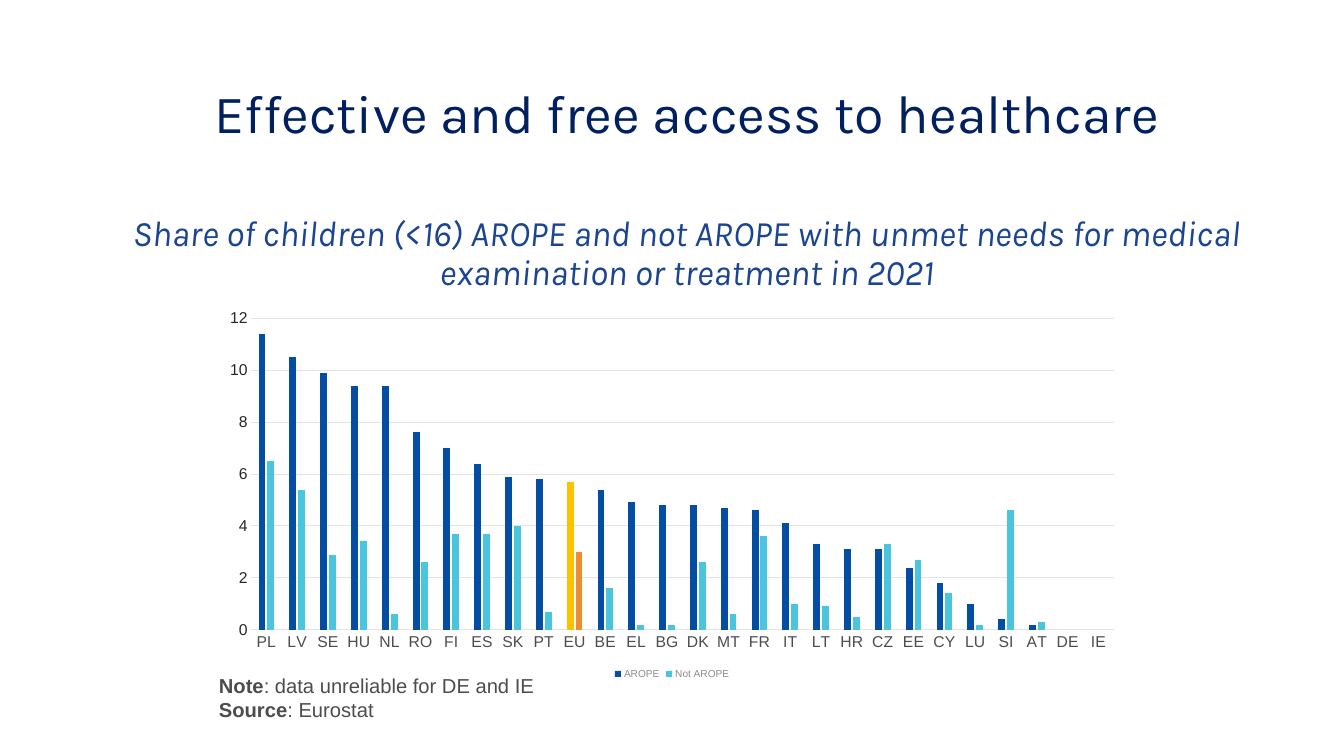
"""Build a slide on unmet medical needs of children by country."""
from lxml import etree
from pptx import Presentation
from pptx.chart.data import CategoryChartData
from pptx.dml.color import RGBColor
from pptx.enum.chart import XL_CHART_TYPE, XL_LEGEND_POSITION, XL_TICK_MARK
from pptx.enum.text import MSO_ANCHOR, PP_ALIGN
from pptx.oxml.ns import qn
from pptx.util import Pt

PX = 11331
SLIDE_SIZE = (1344, 756)
HEADING_BOX = (107, 83, 1160, 86)
CHART_BOX = (211, 302, 922, 381)
PLOT_BOX = (251, 318, 863, 312)
NOTES_BOX = (211, 669, 852, 57)

NAVY = RGBColor(0x00, 0x20, 0x60)
BLUE = RGBColor(0x1B, 0x45, 0x90)
DARK_GREY = RGBColor(0x4D, 0x4D, 0x4D)
BLACK = RGBColor(0x26, 0x26, 0x26)
LEGEND_GREY = RGBColor(0x8B, 0x8B, 0x8B)
GRID_GREY = RGBColor(0xE4, 0xE4, 0xE4)
AROPE_BLUE = RGBColor(0x03, 0x4E, 0xA2)
OTHER_CYAN = RGBColor(0x4B, 0xC5, 0xDE)
EU_YELLOW = RGBColor(0xFF, 0xC0, 0x00)
EU_ORANGE = RGBColor(0xED, 0x8D, 0x2F)

TITLE = "Effective and free access to healthcare"
SUBTITLE = ("Share of children (<16) AROPE and not AROPE with unmet needs for medical "
            "examination or treatment in 2021")
HEADINGS = [(TITLE, 48, NAVY, False, 0), (SUBTITLE, 32, BLUE, True, 63)]
NOTES = [("Note", ": data unreliable for DE and IE"), ("Source", ": Eurostat")]
COUNTRIES = ("PL LV SE HU NL RO FI ES SK PT EU BE EL BG "
             "DK MT FR IT LT HR CZ EE CY LU SI AT DE IE").split()
SERIES = [
    ("AROPE", AROPE_BLUE, EU_YELLOW,
     [11.4, 10.5, 9.9, 9.4, 9.4, 7.6, 7, 6.4, 5.9, 5.8, 5.7, 5.4, 4.9, 4.8,
      4.8, 4.7, 4.6, 4.1, 3.3, 3.1, 3.1, 2.4, 1.8, 1, 0.4, 0.2, None, None]),
    ("Not AROPE", OTHER_CYAN, EU_ORANGE,
     [6.5, 5.4, 2.9, 3.4, 0.6, 2.6, 3.7, 3.7, 4, 0.7, 3, 1.6, 0.2, 0.2,
      2.6, 0.6, 3.6, 1, 0.9, 0.5, 3.3, 2.7, 1.4, 0.2, 4.6, 0.3, None, None]),
]


def emu(box):
    return [length * PX for length in box]


def set_font(font, name, size, color):
    font.name, font.size = name, Pt(size)
    font.color.rgb = color


def add_text_frame(slide, box):
    frame = slide.shapes.add_textbox(*emu(box)).text_frame
    frame.word_wrap = True
    frame.vertical_anchor = MSO_ANCHOR.TOP
    return frame


def paragraphs(frame, count):
    for _ in range(count - 1):
        frame.add_paragraph()
    return frame.paragraphs


def add_headings(slide):
    frame = add_text_frame(slide, HEADING_BOX)
    for paragraph, heading in zip(paragraphs(frame, len(HEADINGS)), HEADINGS):
        paragraph.text, size, color, italic, gap = heading
        paragraph.alignment = PP_ALIGN.CENTER
        paragraph.line_spacing = 0.9
        if gap:
            paragraph.space_before = Pt(gap)
        set_font(paragraph.font, "Karla", size, color)
        paragraph.font.italic = italic


def add_notes(slide):
    frame = add_text_frame(slide, NOTES_BOX)
    for paragraph, (label, detail) in zip(paragraphs(frame, len(NOTES)), NOTES):
        label_run = paragraph.add_run()
        label_run.text = label
        label_run.font.bold = True
        paragraph.add_run().text = detail
        set_font(paragraph.font, "Arial", 18, DARK_GREY)


def place_plot(chart):
    plot_area = chart._chartSpace.chart.plotArea
    for old_layout in plot_area.findall(qn("c:layout")):
        plot_area.remove(old_layout)
    layout = etree.Element(qn("c:layout"))
    plot_area.insert(0, layout)
    manual = etree.SubElement(layout, qn("c:manualLayout"))
    left, top, width, height = CHART_BOX
    plot_left, plot_top, plot_width, plot_height = PLOT_BOX
    settings = [("layoutTarget", "inner"), ("xMode", "edge"), ("yMode", "edge"),
                ("x", (plot_left - left) / width), ("y", (plot_top - top) / height),
                ("w", plot_width / width), ("h", plot_height / height)]
    for tag, value in settings:
        etree.SubElement(manual, qn(f"c:{tag}")).set("val", str(value))


def style_axes(chart):
    countries, shares = chart.category_axis, chart.value_axis
    for axis, color in ((countries, DARK_GREY), (shares, BLACK)):
        axis.major_tick_mark = axis.minor_tick_mark = XL_TICK_MARK.NONE
        set_font(axis.tick_labels.font, "Arial", 14, color)
    shares.minimum_scale, shares.maximum_scale, shares.major_unit = 0, 12, 2
    shares.tick_labels.number_format = "0"
    shares.tick_labels.number_format_is_linked = False
    shares.has_major_gridlines = True
    shares.format.line.fill.background()
    for line in (countries.format.line, shares.major_gridlines.format.line):
        line.color.rgb = GRID_GREY
        line.width = Pt(0.75)


def add_needs_chart(slide):
    needs = CategoryChartData()
    needs.categories = COUNTRIES
    for name, _, _, shares in SERIES:
        needs.add_series(name, shares)
    chart = slide.shapes.add_chart(
        XL_CHART_TYPE.COLUMN_CLUSTERED, *emu(CHART_BOX), needs).chart
    set_font(chart.font, "Arial", 10, DARK_GREY)
    chart.has_title = False
    chart.has_legend = True
    chart.legend.position = XL_LEGEND_POSITION.BOTTOM
    chart.legend.include_in_layout = False
    set_font(chart.legend.font, "Arial", 9, LEGEND_GREY)

    columns = chart.plots[0]
    columns.gap_width, columns.overlap = 219, -27
    columns.vary_by_categories = False
    for series, (_, color, eu_color, _) in zip(columns.series, SERIES):
        eu_column = series.points[COUNTRIES.index("EU")]
        for part, fill_color in ((series, color), (eu_column, eu_color)):
            part.format.fill.solid()
            part.format.fill.fore_color.rgb = fill_color
    style_axes(chart)
    place_plot(chart)


def main():
    presentation = Presentation()
    presentation.slide_width, presentation.slide_height = emu(SLIDE_SIZE)
    slide = presentation.slides.add_slide(presentation.slide_layouts[6])
    add_headings(slide)
    add_needs_chart(slide)
    add_notes(slide)
    presentation.save("out.pptx")


if __name__ == "__main__":
    main()
